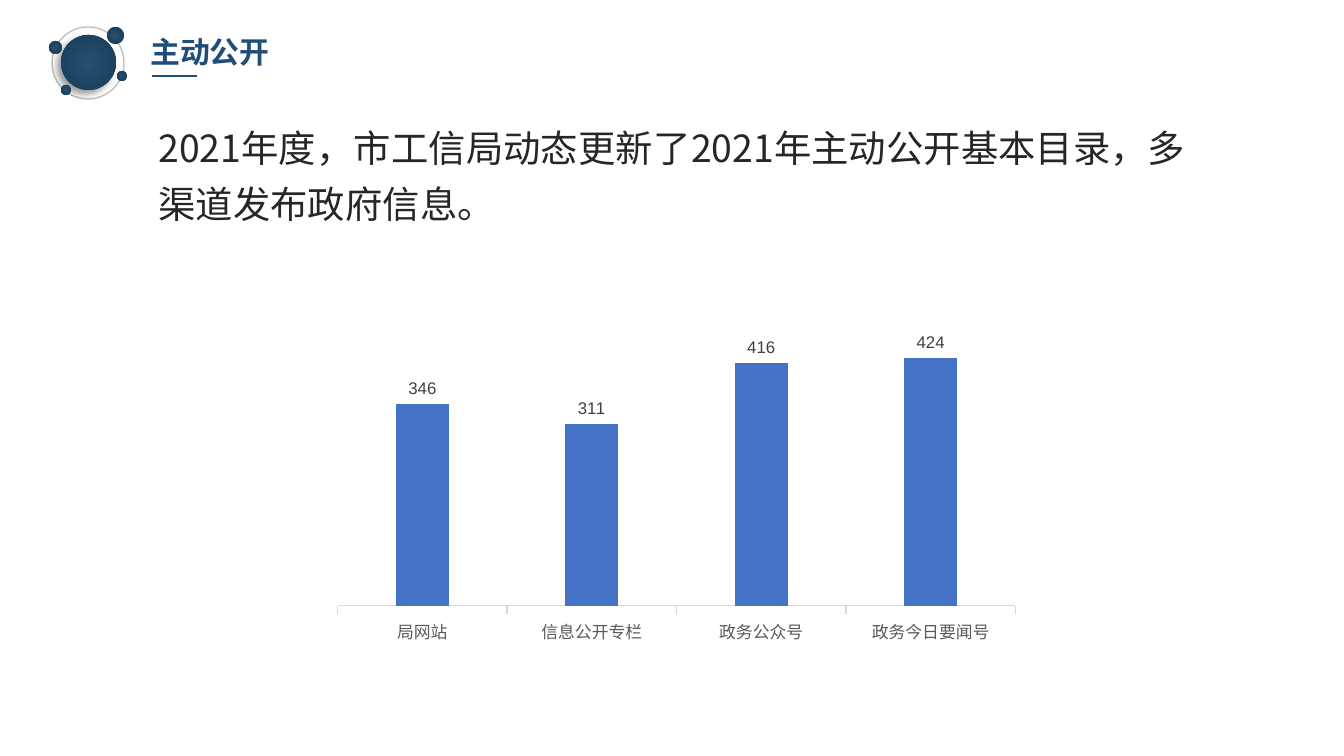
from lxml import etree
from pptx import Presentation, util as u
from pptx.chart.data import CategoryChartData
from pptx.dml.color import RGBColor
from pptx.enum import chart as ch, shapes, text
from pptx.oxml import parse_xml
from pptx.oxml.ns import nsdecls, qn

TITLE = "主动公开"
BODY = "2021年度，市工信局动态更新了2021年主动公开基本目录，多渠道发布政府信息。"
COUNTS = {"局网站": 346, "信息公开专栏": 311, "政务公众号": 416, "政务今日要闻号": 424}

THEME = {
    "navy": "1F4E79", "ink": "262626", "inner": "27506E", "outer": "173A5B",
    "ring": "BFBFBF", "bar": "4472C4", "axis": "D9D9D9", "label": "404040",
    "tick": "595959", "black": "000000",
    "latin": "Arial", "cjk": "Noto Sans CJK SC",
    "title": 16, "body": 20, "chart": 10, "small": 9,
}

SIZE = (1344, 756)
RING = (52, 27, 72, 72)
CORE = (61, 35, 55, 55)
DOTS = [(107, 27, 17), (49, 41, 13), (61, 85, 10), (117, 71, 10)]
TITLE_BOX = (137, 27, 293, 50)
RULE = (152, 76, 197, 76)
BODY_BOX = (145, 107, 1054, 127)
CHART_BOX = (285, 261, 753, 431)
PLOT = {"x": 0.07, "y": 0.19, "w": 0.9, "h": 0.61}


def px(*nums):
    return [round(n * 914400 / 134.4) for n in nums]


def rgb(key):
    return RGBColor.from_string(THEME[key])


def style(font, size, color, face="latin", bold=False):
    font.name = THEME[face]
    font.size = u.Pt(THEME[size])
    font.color.rgb = rgb(color)
    font.bold = bold


def disc(slide, box):
    oval = slide.shapes.add_shape(shapes.MSO_SHAPE.OVAL, *px(*box))
    oval.shadow.inherit = False
    oval.line.fill.background()
    return oval


def shade(oval):
    oval.fill.gradient()
    for stop, key in zip(oval.fill.gradient_stops, ("inner", "outer")):
        stop.color.rgb = rgb(key)
    lin = oval.element.spPr.find(".//" + qn("a:lin"))
    lin.getparent().replace(lin, parse_xml(
        f'<a:path {nsdecls("a")} path="circle"><a:fillToRect l="50000" '
        't="50000" r="50000" b="50000"/></a:path>'))


def emblem(slide):
    ring = disc(slide, RING)
    ring.fill.background()
    ring.line.color.rgb = rgb("ring")
    ring.line.width = u.Pt(0.75)
    core = disc(slide, CORE)
    shade(core)
    core.element.spPr.find(qn("a:effectLst")).append(parse_xml(
        f'<a:outerShdw {nsdecls("a")} blurRad="{u.Pt(4)}" dist="{u.Pt(3)}" '
        f'dir="{135 * 60000}" rotWithShape="0"><a:srgbClr val="{THEME["black"]}">'
        '<a:alpha val="40000"/></a:srgbClr></a:outerShdw>'))
    for x, y, d in DOTS:
        shade(disc(slide, (x, y, d, d)))


def write(shape, box, words, align):
    shape.left, shape.top, shape.width, shape.height = px(*box)
    frame = shape.text_frame
    frame.text = words
    frame.word_wrap = True
    frame.auto_size = text.MSO_AUTO_SIZE.NONE
    frame.vertical_anchor = text.MSO_ANCHOR.TOP
    para = frame.paragraphs[0]
    para.alignment = align
    para.space_before = u.Pt(0)
    return para


def heading(slide):
    para = write(slide.shapes.title, TITLE_BOX, TITLE, text.PP_ALIGN.LEFT)
    para.line_spacing = 1.0
    style(para.font, "title", "navy", bold=True)
    rule = slide.shapes.add_connector(shapes.MSO_CONNECTOR.STRAIGHT, *px(*RULE))
    rule.line.color.rgb = rgb("navy")
    rule.line.width = u.Pt(1.5)
    etree.SubElement(rule.element.spPr, qn("a:effectLst"))


def summary(slide):
    para = write(slide.placeholders[1], BODY_BOX, BODY, text.PP_ALIGN.JUSTIFY)
    para.line_spacing = u.Pt(30)
    para.space_after = u.Pt(8)
    props = para._p.get_or_add_pPr()
    props.set("marL", "0")
    props.set("indent", "0")
    etree.SubElement(props, qn("a:buNone"))
    style(para.font, "body", "ink", "cjk")


def graph(slide):
    data = CategoryChartData()
    data.categories = list(COUNTS)
    data.add_series("Series 1", list(COUNTS.values()))
    kind = ch.XL_CHART_TYPE.COLUMN_CLUSTERED
    chart = slide.shapes.add_chart(kind, *px(*CHART_BOX), data).chart
    chart.has_legend = False
    chart.has_title = False
    style(chart.font, "chart", "black")

    cats = chart.category_axis
    cats.major_tick_mark = ch.XL_TICK_MARK.OUTSIDE
    cats.format.line.color.rgb = rgb("axis")
    cats.format.line.width = u.Pt(0.75)
    style(cats.tick_labels.font, "small", "tick")
    vals = chart.value_axis
    vals.visible = False
    vals.has_major_gridlines = False
    vals.minimum_scale, vals.maximum_scale = 0, 450

    plot = chart.plots[0]
    plot.gap_width, plot.overlap = 219, -27
    plot.vary_by_categories = False
    bars = plot.series[0]
    bars.format.fill.solid()
    bars.format.fill.fore_color.rgb = rgb("bar")
    labels = bars.data_labels
    labels.show_value = True
    labels.position = ch.XL_LABEL_POSITION.OUTSIDE_END
    style(labels.font, "small", "label")

    area = chart._chartSpace.chart.plotArea
    for old in area.findall(qn("c:layout")):
        area.remove(old)
    spots = "".join(f'<c:{k} val="{v}"/>' for k, v in PLOT.items())
    area.insert(0, parse_xml(
        f'<c:layout {nsdecls("c")}><c:manualLayout><c:layoutTarget val="inner"/>'
        f'<c:xMode val="edge"/><c:yMode val="edge"/>{spots}'
        '</c:manualLayout></c:layout>'))


def main():
    deck = Presentation()
    deck.slide_width, deck.slide_height = px(*SIZE)
    slide = deck.slides.add_slide(deck.slide_layouts[1])
    emblem(slide)
    heading(slide)
    summary(slide)
    graph(slide)
    deck.save("out.pptx")


if __name__ == "__main__":
    main()
